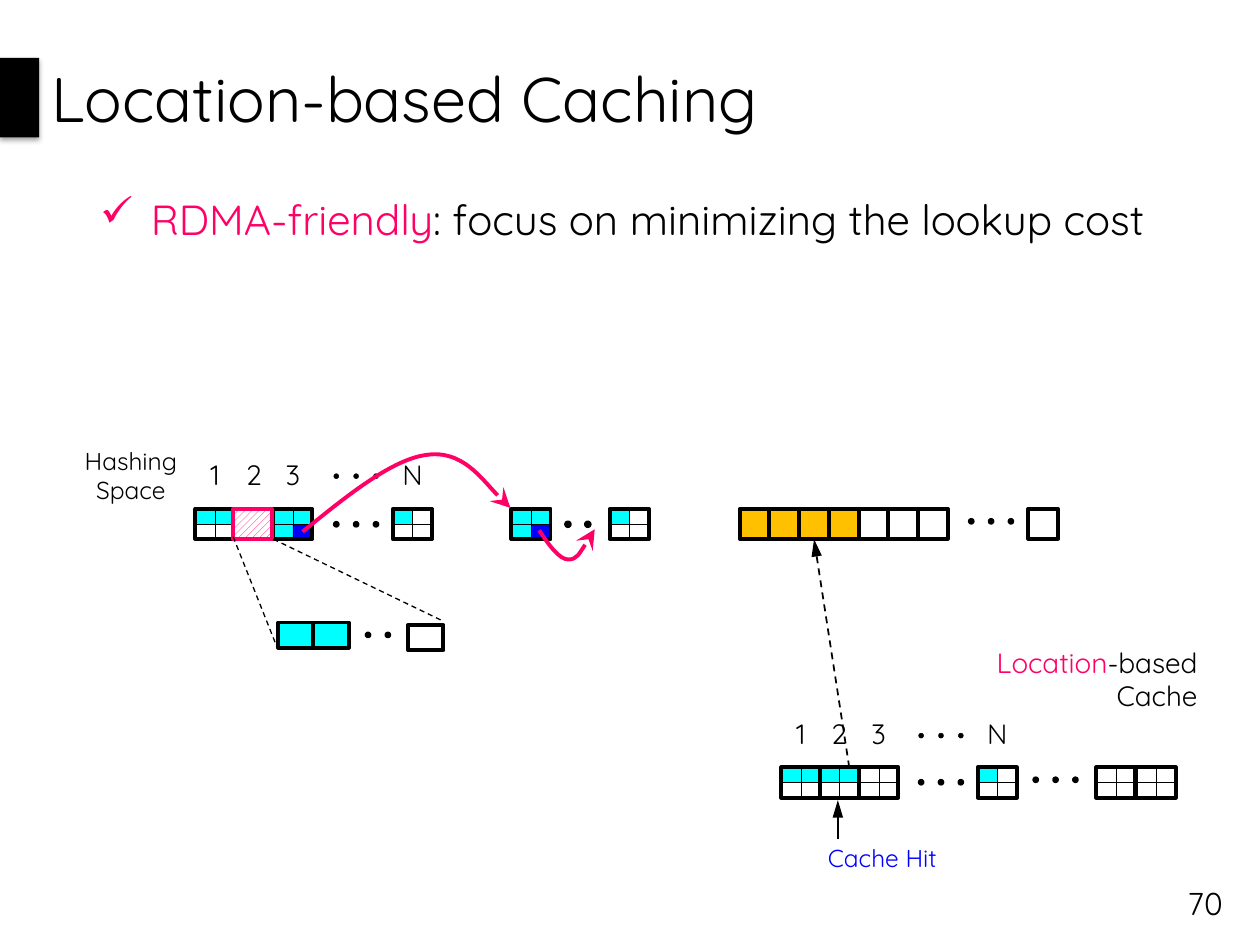
"""Build the slide on location-based caching."""
from lxml.etree import SubElement
from pptx import Presentation
from pptx.dml.color import RGBColor
from pptx.enum.dml import MSO_LINE, MSO_PATTERN
from pptx.enum.shapes import MSO_CONNECTOR, MSO_SHAPE
from pptx.enum.text import MSO_ANCHOR, PP_ALIGN
from pptx.oxml.ns import qn
from pptx.util import Cm, Pt

BLACK, WHITE, PINK = "000000", "FFFFFF", "FF0066"
CYAN, BLUE, AMBER = "00FFFF", "0000FF", "FFC000"
FONT = "Quicksand"

BUCKET_WIDTH, BUCKET_HEIGHT = 0.79, 0.61
DOT_SIZE, DOT_PITCH = 0.1, 0.4
HASH_TOP, CACHE_TOP = 10.26, 15.47
LABEL_RISE = 1.0

FULL = (CYAN, CYAN, CYAN, BLUE)
HALF = (CYAN, CYAN, WHITE, WHITE)
SINGLE = (CYAN, WHITE, WHITE, WHITE)
EMPTY = (WHITE,) * 4

BUCKETS = [
    (5.51, HASH_TOP, FULL, "3"), (4.72, HASH_TOP, EMPTY, "2"),
    (3.94, HASH_TOP, HALF, "1"), (7.92, HASH_TOP, SINGLE, "N"),
    (10.31, HASH_TOP, FULL, ""), (12.29, HASH_TOP, SINGLE, ""),
    (17.32, CACHE_TOP, EMPTY, "3"), (16.52, CACHE_TOP, HALF, "2"),
    (15.75, CACHE_TOP, HALF, "1"), (19.71, CACHE_TOP, SINGLE, "N"),
    (22.1, CACHE_TOP, EMPTY, ""), (22.91, CACHE_TOP, EMPTY, ""),
]
BOX_ROWS = [
    (5.61, 12.55, 0.71, 0.51, (CYAN, CYAN)),
    (8.23, 12.6, 0.71, 0.51, (None,)),
    (14.91, HASH_TOP, 0.6, 0.6, (AMBER,) * 4 + (WHITE,) * 3),
    (20.73, HASH_TOP, 0.6, 0.6, (WHITE,)),
]
DOT_ROWS = [
    (6.73, 10.52, 3, 1), (6.73, 9.55, 3, 0.25), (7.37, 12.75, 2, 1),
    (19.53, 10.46, 3, 1), (11.4, 10.52, 2, 1.5), (18.52, 15.72, 3, 1),
    (18.52, 14.78, 3, 0.25), (20.83, 15.67, 3, 1),
]
LINES = [
    ((4.7, 10.82), (5.59, 13.06), 0.75, True, False),
    ((5.51, 10.87), (8.89, 12.5), 0.75, True, False),
    ((16.89, 16.92), (16.89, 16.13), 1, False, True),
    ((17.12, 15.47), (16.41, 10.87), 1, True, True),
]
CURVES = [
    [(6.1, 10.72), (7.01, 9.98), (7.92, 9.25), (8.61, 9.17),
     (9.32, 9.07), (10.08, 10.08), (10.29, 10.24)],
    [(10.87, 10.69), (11.07, 11.0), (11.28, 11.28), (11.46, 11.28),
     (11.63, 11.28), (11.81, 10.97), (11.99, 10.67)],
]
TEXTS = [
    ((0.79, 0, 24.61, 3.94), [("Location-based Caching", BLACK)], 36, PP_ALIGN.LEFT, MSO_ANCHOR.MIDDLE),
    ((23.5, 17.7, 1.4, 1.02), [("70", BLACK)], 18, PP_ALIGN.RIGHT, MSO_ANCHOR.MIDDLE),
    ((1.37, 8.86, 2.54, 1.45), [("Hashing Space", BLACK)], 14, PP_ALIGN.CENTER, MSO_ANCHOR.TOP),
    ((16.1, 16.87, 3.38, 0.86), [("Cache Hit", BLUE)], 14, PP_ALIGN.CENTER, MSO_ANCHOR.TOP),
    ((19.51, 12.88, 4.88, 1.63), [("Location", PINK), ("-based Cache", BLACK)], 16,
     PP_ALIGN.RIGHT, MSO_ANCHOR.TOP),
]
BULLET_TEXT = ((1.04, 3.78, 23.67, 4.34),
               [("RDMA-friendly", PINK), (": focus on minimizing the lookup cost", BLACK)],
               24, PP_ALIGN.LEFT, MSO_ANCHOR.TOP)
BULLET_INDENT = {"marL": Cm(1.75), "indent": Cm(-1.02)}
SHADOW = {"blurRad": Pt(3.1), "dist": Pt(1.8), "dir": 5400000, "rotWithShape": 0}


def color(value):
    """Return the colour for a hex string."""
    return RGBColor.from_string(value)


def add_element(parent, tag, **attributes):
    """Append an XML element with the given attributes."""
    return SubElement(parent, qn(tag), {name: str(value) for name, value in attributes.items()})


def add_box(shapes, kind, left, top, width, height, fill=None, line=None, weight=2.25):
    """Add a preset shape with a plain fill and outline."""
    shape = shapes.add_shape(kind, Cm(left), Cm(top), Cm(width), Cm(height))
    shape.shadow.inherit = False
    if fill:
        shape.fill.solid()
        shape.fill.fore_color.rgb = color(fill)
    else:
        shape.fill.background()
    if line:
        shape.line.color.rgb = color(line)
        shape.line.width = Pt(weight)
    else:
        shape.line.fill.background()
    return shape


def add_text(slide, place, runs, size, align, anchor, margin=0.25):
    """Add a wrapped text box and return its paragraph."""
    frame = slide.shapes.add_textbox(*map(Cm, place)).text_frame
    frame_format = {"word_wrap": True, "vertical_anchor": anchor, "margin_left": Cm(margin),
                    "margin_right": Cm(margin), "margin_top": Cm(margin / 2),
                    "margin_bottom": Cm(margin / 2)}
    for name, value in frame_format.items():
        setattr(frame, name, value)
    paragraph = frame.paragraphs[0]
    paragraph.alignment = align
    for text, run_color in runs:
        run = paragraph.add_run()
        run.text = text
        for name, value in {"name": FONT, "size": Pt(size)}.items():
            setattr(run.font, name, value)
        run.font.color.rgb = color(run_color)
    return paragraph


def add_bullet(paragraph):
    """Give the paragraph a pink check mark."""
    properties = paragraph._p.get_or_add_pPr()
    for name, value in BULLET_INDENT.items():
        properties.set(name, str(int(value)))
    add_element(add_element(properties, "a:buClr"), "a:srgbClr", val=PINK)
    add_element(properties, "a:buChar", char="✓")


def add_bucket(slide, left, top, fills, label):
    """Add a bucket of four slots, with its label above."""
    shapes = slide.shapes.add_group_shape().shapes
    width, height = BUCKET_WIDTH / 2, BUCKET_HEIGHT / 2
    for index, fill in enumerate(fills):
        row, column = divmod(index, 2)
        add_box(shapes, MSO_SHAPE.RECTANGLE, left + column * width, top + row * height,
                width, height, fill, BLACK, 0.25)
    add_box(shapes, MSO_SHAPE.RECTANGLE, left, top, BUCKET_WIDTH, BUCKET_HEIGHT, None, BLACK)
    if label:
        add_text(slide, (left, top - LABEL_RISE, BUCKET_WIDTH, BUCKET_HEIGHT), [(label, BLACK)],
                 16, PP_ALIGN.CENTER, MSO_ANCHOR.MIDDLE, 0)


def add_line(slide, start, end, weight, dashed, arrow):
    """Add a straight black connector."""
    line = slide.shapes.add_connector(MSO_CONNECTOR.STRAIGHT, *map(Cm, start + end))
    line.line.color.rgb = color(BLACK)
    line.line.width = Pt(weight)
    if dashed:
        line.line.dash_style = MSO_LINE.DASH
    if arrow:
        add_element(line.line._get_or_add_ln(), "a:tailEnd", type="triangle", w="med", len="lg")
    add_element(line._element.spPr, "a:effectLst")


def add_curve(slide, points):
    """Add a pink curved arrow through cubic Bezier points."""
    start, *others = [(Cm(x), Cm(y)) for x, y in points]
    builder = slide.shapes.build_freeform(*start)
    builder.add_line_segments(others, close=False)
    shape = builder.convert_to_shape()
    shape.shadow.inherit = False
    shape.fill.background()
    shape.line.color.rgb = color(PINK)
    shape.line.width = Pt(2.25)
    add_element(shape.line._get_or_add_ln(), "a:tailEnd", type="stealth", w="lg", len="lg")
    outline = next(shape._element.iter(qn("a:path")))
    segments = outline.findall(qn("a:lnTo"))
    for first in range(0, len(segments), 3):
        bezier = add_element(outline, "a:cubicBezTo")
        for segment in segments[first:first + 3]:
            bezier.append(segment[0])
            outline.remove(segment)


def main():
    """Build and save the presentation."""
    presentation = Presentation()
    presentation.slide_width, presentation.slide_height = Cm(25.4), Cm(19.05)
    slide = presentation.slides.add_slide(presentation.slide_layouts[6])
    marker = add_box(slide.shapes, MSO_SHAPE.RECTANGLE, 0, 1.17, 0.79, 1.6, BLACK)
    effects = marker._element.spPr.find(qn("a:effectLst"))
    shadow_color = add_element(add_element(effects, "a:outerShdw", **SHADOW), "a:srgbClr", val=BLACK)
    add_element(shadow_color, "a:alpha", val=35000)
    for text in TEXTS:
        add_text(slide, *text)
    add_bullet(add_text(slide, *BULLET_TEXT))
    for bucket in BUCKETS:
        add_bucket(slide, *bucket)
    for left, top, width, height, fills in BOX_ROWS:
        for index, fill in enumerate(fills):
            add_box(slide.shapes, MSO_SHAPE.RECTANGLE, left + index * width, top, width, height, fill, BLACK)
    for left, top, count, weight in DOT_ROWS:
        for index in range(count):
            add_box(slide.shapes, MSO_SHAPE.OVAL, left + index * DOT_PITCH, top,
                    DOT_SIZE, DOT_SIZE, BLACK, BLACK, weight)
    hatched = add_box(slide.shapes, MSO_SHAPE.RECTANGLE, 4.7, HASH_TOP, BUCKET_WIDTH, BUCKET_HEIGHT, None, PINK)
    hatched.fill.patterned()
    hatched.fill.pattern = MSO_PATTERN.WIDE_UPWARD_DIAGONAL
    hatched.fill.fore_color.rgb = color(PINK)
    hatched.fill.back_color.rgb = color(WHITE)
    for line in LINES:
        add_line(slide, *line)
    for points in CURVES:
        add_curve(slide, points)
    presentation.save("out.pptx")


if __name__ == "__main__":
    main()
